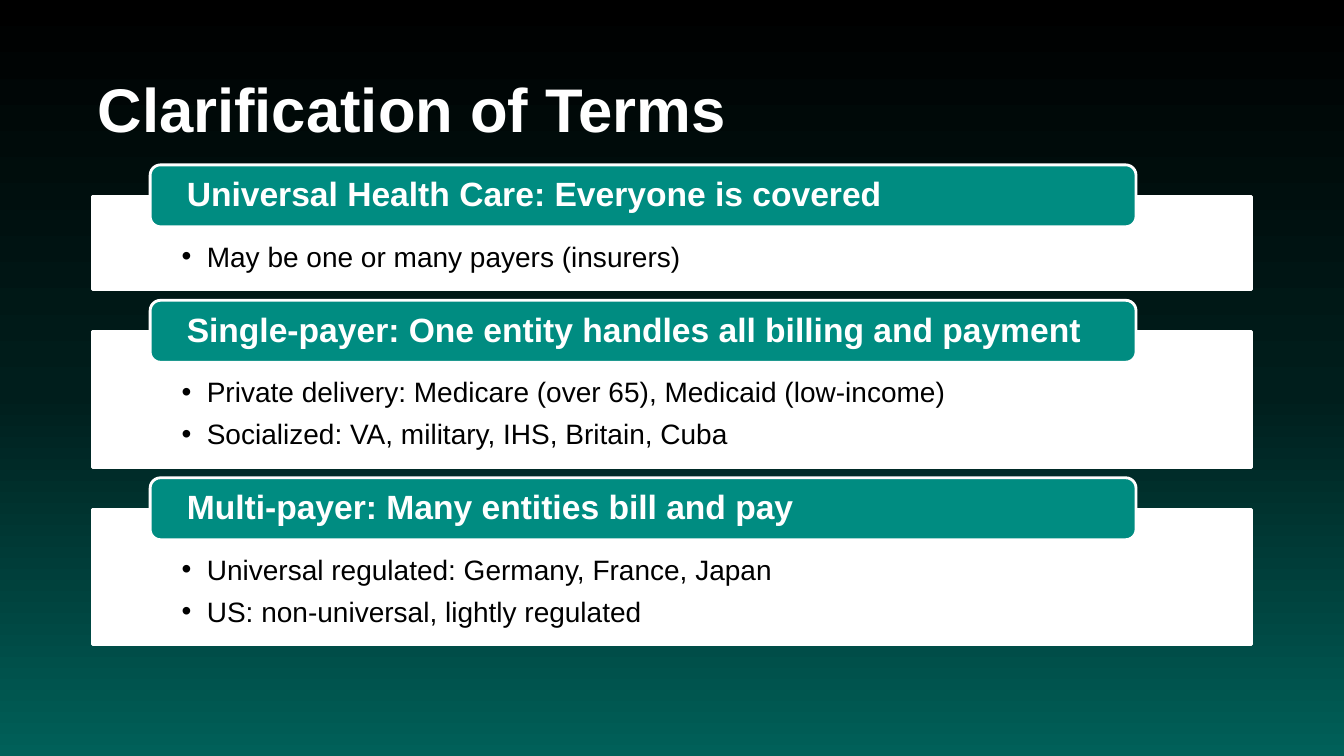
"""Build the slide that clarifies three health care payment terms."""
from copy import deepcopy

from lxml import etree
from pptx import Presentation
from pptx.dml.color import RGBColor
from pptx.enum.shapes import MSO_SHAPE
from pptx.enum.text import MSO_ANCHOR, PP_ALIGN
from pptx.oxml.ns import qn
from pptx.util import Pt

TITLE = "Clarification of Terms"
TERMS = [
    ("Universal Health Care: Everyone is covered",
     ["May be one or many payers (insurers)"]),
    ("Single-payer: One entity handles all billing and payment",
     ["Private delivery: Medicare (over 65), Medicaid (low-income)",
      "Socialized: VA, military, IHS, Britain, Cuba"]),
    ("Multi-payer: Many entities bill and pay",
     ["Universal regulated: Germany, France, Japan",
      "US: non-universal, lightly regulated"]),
]
BACKGROUND = [(0, "000000"), (0.52, "001E1C"), (1, "006059")]
WHITE, BLACK, TEAL = "FFFFFF", "000000", "008C81"
FONT = "Arial"
RECTANGLE, ROUNDED = MSO_SHAPE.RECTANGLE, MSO_SHAPE.ROUNDED_RECTANGLE
TOP, MIDDLE, LEFT = MSO_ANCHOR.TOP, MSO_ANCHOR.MIDDLE, PP_ALIGN.LEFT

PX = 9525
SLIDE_WIDTH, SLIDE_HEIGHT = 1280, 720
PANEL_LEFT, PANEL_WIDTH, FIRST_TOP, PANEL_GAP = 88, 1104, 187, 40
ONE_LINE_HEIGHT, EXTRA_LINE = 89, 40
HEADER_LEFT, HEADER_WIDTH, HEADER_HEIGHT, HEADER_RISE = 143, 939, 59, 30
BULLET_INDENT = 24


def color(hex_value):
    return RGBColor.from_string(hex_value)


def place(shape, left, top, width, height):
    shape.left, shape.top = left * PX, top * PX
    shape.width, shape.height = width * PX, height * PX


def add_bullet(para):
    para.level = 1
    properties = para._p.get_or_add_pPr()
    properties.set("marL", str(BULLET_INDENT * PX))
    properties.set("indent", str(-BULLET_INDENT * PX))
    etree.SubElement(properties, qn("a:buFont")).set("typeface", FONT)
    etree.SubElement(properties, qn("a:buChar")).set("char", "•")


def write(shape, lines, size, ink, bold=False, bullet=False, anchor=MIDDLE,
          insets=(5, 5, 5, 5), line_spacing=None, space_after=0):
    frame = shape.text_frame
    frame.word_wrap = True
    frame.vertical_anchor = anchor
    frame.margin_left, frame.margin_top, frame.margin_right, frame.margin_bottom = (
        inset * PX for inset in insets)
    for index, line in enumerate(lines):
        para = frame.add_paragraph() if index else frame.paragraphs[0]
        para.alignment = LEFT
        para.line_spacing = line_spacing
        para.space_after = Pt(space_after)
        if bullet:
            add_bullet(para)
        span = para.add_run()
        span.text = line
        span.font.name, span.font.size, span.font.bold = FONT, Pt(size), bold
        span.font.color.rgb = color(ink)


def add_box(page, kind, fill, *bounds):
    box = page.shapes.add_shape(kind, *(length * PX for length in bounds))
    box.shadow.inherit = False
    box.fill.solid()
    box.fill.fore_color.rgb = color(fill)
    box.line.color.rgb = color(WHITE)
    box.line.width = Pt(2)
    return box


def paint_background(page):
    fill = page.background.fill
    fill.gradient()
    fill.gradient_angle = 270
    stop_list = next(page.element.iter(qn("a:gsLst")))
    stop_list.append(deepcopy(stop_list[0]))
    for stop, (position, hex_value) in zip(fill.gradient_stops, BACKGROUND):
        stop.position = position
        stop.color.rgb = color(hex_value)


def main():
    deck = Presentation()
    deck.slide_width, deck.slide_height = SLIDE_WIDTH * PX, SLIDE_HEIGHT * PX
    page = deck.slides.add_slide(deck.slide_layouts[5])
    paint_background(page)
    title = page.shapes.title
    place(title, PANEL_LEFT, 38, PANEL_WIDTH, 139)
    write(title, [TITLE], 44, WHITE, bold=True, line_spacing=0.9)

    top = FIRST_TOP
    for term, details in TERMS:
        height = ONE_LINE_HEIGHT + EXTRA_LINE * (len(details) - 1)
        panel = add_box(page, RECTANGLE, WHITE, PANEL_LEFT, top, PANEL_WIDTH, height)
        write(panel, details, 20, BLACK, bullet=True, anchor=TOP,
              insets=(85, 41, 85, 15), space_after=6)
        header = add_box(page, ROUNDED, TEAL, HEADER_LEFT, top - HEADER_RISE,
                         HEADER_WIDTH, HEADER_HEIGHT)
        write(header, [term], 24, WHITE, bold=True, insets=(32, 0, 32, 0),
              line_spacing=0.9)
        top += height + PANEL_GAP
    deck.save("out.pptx")


if __name__ == "__main__":
    main()
